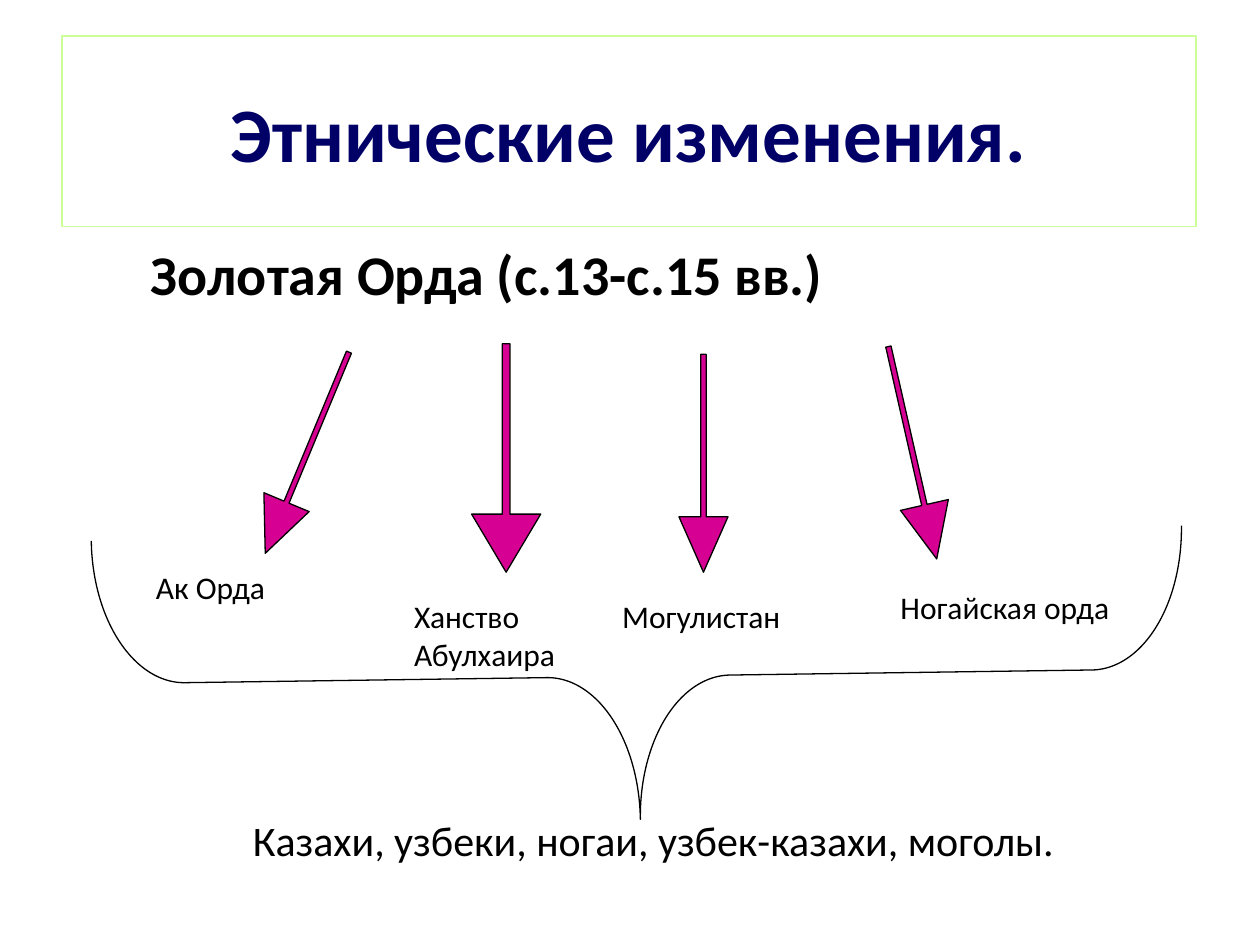
from dataclasses import dataclass

from pptx import Presentation
from pptx.dml.color import RGBColor
from pptx.enum.shapes import MSO_SHAPE
from pptx.enum.text import MSO_ANCHOR, PP_ALIGN
from pptx.util import Pt


@dataclass(frozen=True)
class Theme:
    font: str = "Calibri"
    navy: str = "000066"
    black: str = "000000"
    magenta: str = "D60093"
    lime: str = "CCFF99"
    line: float = 0.75
    title: int = 44
    heading: int = 32
    result: int = 24
    label: int = 18


THEME = Theme()
LABELS = [
    ("Ак Орда", (82, 321, 88, 29)),
    ("Ханство\nАбулхаира", (229.5, 337.5, 112.5, 50.5)),
    ("Могулистан", (348.5, 337.5, 152.5, 29)),
    ("Ногайская орда", (507.5, 332.5, 210, 29)),
]
ARROWS = [
    ((161.5, 196.5, 28, 124.5), 22.6, 1.13),
    ((269.5, 196.5, 39.5, 130.5), 0, 0.84),
    ((388, 202.5, 28, 124.5), 0, 1.13),
    ((507.5, 196.5, 28, 124.5), 347.2, 1.13),
]


def set_attrs(obj, fmt):
    for name, value in fmt.items():
        setattr(obj, name, value)


def write(sp, text, size, color=THEME.black, bold=False, align=PP_ALIGN.LEFT, **frame):
    tf = sp.text_frame
    set_attrs(tf, {"word_wrap": True, **frame})
    for i, line in enumerate(text.split("\n")):
        p = tf.add_paragraph() if i else tf.paragraphs[0]
        p.alignment = align
        r = p.add_run()
        r.text = line
        set_attrs(r.font, {"name": THEME.font, "size": Pt(size), "bold": bold})
        r.font.color.rgb = RGBColor.from_string(color)


def add_text(slide, box, text, size, **fmt):
    write(slide.shapes.add_textbox(*map(Pt, box)), text, size, **fmt)


def add_outlined(slide, kind, box, line, fill=None, rotation=0, adj=()):
    sp = slide.shapes.add_shape(kind, *map(Pt, box))
    sp.shadow.inherit = False
    sp.rotation = rotation
    for i, value in enumerate(adj):
        sp.adjustments[i] = value
    if fill:
        sp.fill.solid()
        sp.fill.fore_color.rgb = RGBColor.from_string(fill)
    else:
        sp.fill.background()
    sp.line.color.rgb = RGBColor.from_string(line)
    sp.line.width = Pt(THEME.line)
    return sp


def main():
    prs = Presentation()
    set_attrs(prs, {"slide_width": Pt(720), "slide_height": Pt(540)})
    s = prs.slides.add_slide(prs.slide_layouts[6])

    title = add_outlined(s, MSO_SHAPE.RECTANGLE, (35.5, 20.5, 648, 109), THEME.lime)
    write(title, "Этнические изменения.", THEME.title, color=THEME.navy, bold=True,
          align=PP_ALIGN.CENTER, vertical_anchor=MSO_ANCHOR.MIDDLE)
    add_text(s, (36, 133.5, 648, 324), "Золотая Орда (с.13-с.15 вв.)",
             THEME.heading, bold=True, margin_left=Pt(50))

    for box, rotation, head in ARROWS:
        add_outlined(s, MSO_SHAPE.DOWN_ARROW, box, THEME.black, fill=THEME.magenta,
                     rotation=rotation, adj=(0.11, head))
    for text, box in LABELS:
        add_text(s, box, text, THEME.label, word_wrap=False)

    add_outlined(s, MSO_SHAPE.RIGHT_BRACE, (283, 75, 163.5, 623), THEME.black,
                 rotation=89.2, adj=(0.32, 0.5))
    add_text(s, (99.5, 440, 548, 58), "Казахи, узбеки, ногаи, узбек-казахи, моголы.",
             THEME.result, align=PP_ALIGN.CENTER, word_wrap=False,
             vertical_anchor=MSO_ANCHOR.BOTTOM)
    prs.save("out.pptx")


if __name__ == "__main__":
    main()
